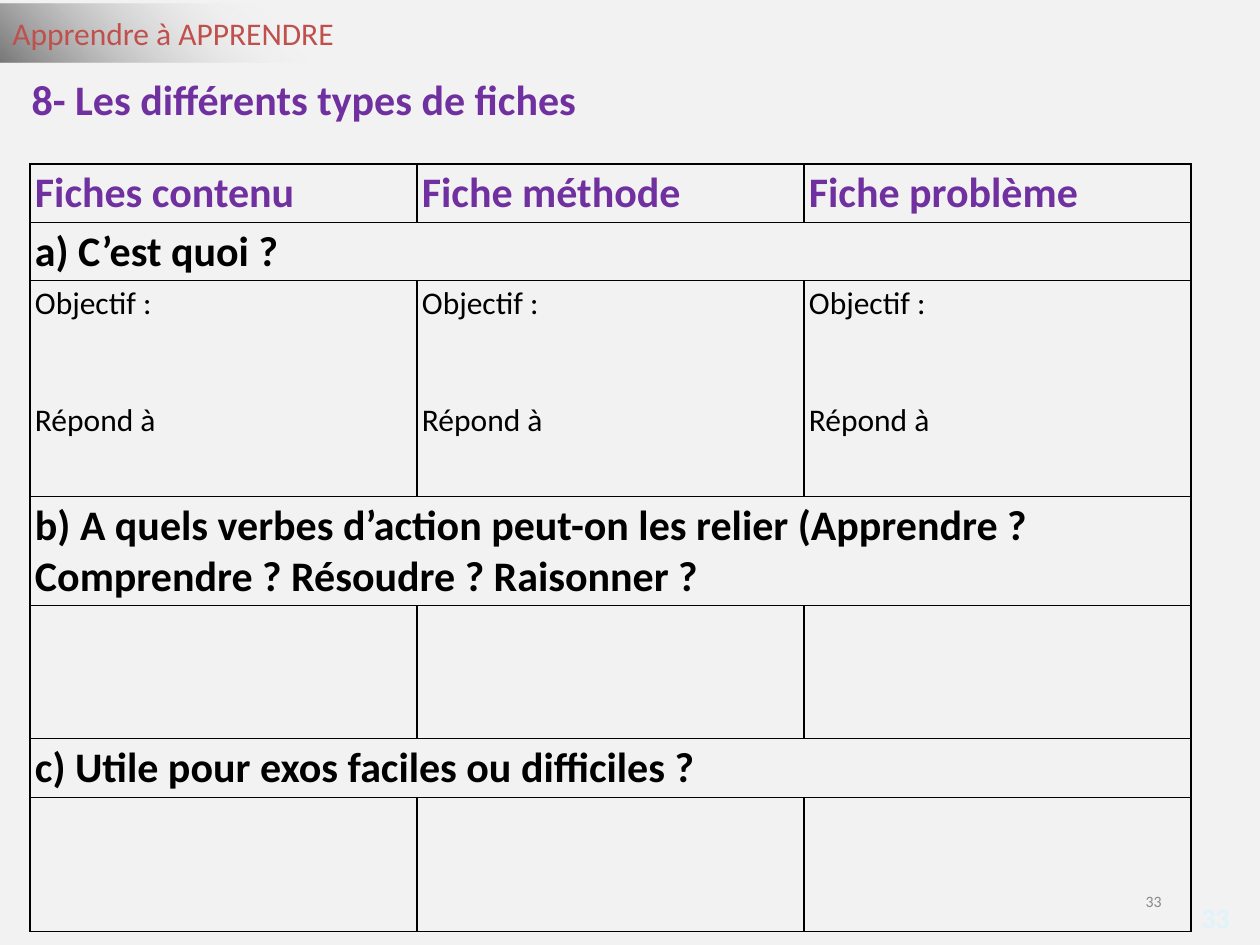
from lxml import etree
from pptx import Presentation
from pptx.dml.color import RGBColor
from pptx.enum.shapes import MSO_SHAPE
from pptx.enum.text import MSO_ANCHOR, MSO_AUTO_SIZE, PP_ALIGN
from pptx.oxml import parse_xml
from pptx.oxml.ns import nsdecls, qn
from pptx.util import Emu, Pt

RECTANGLE = MSO_SHAPE.RECTANGLE
TOP, MIDDLE = MSO_ANCHOR.TOP, MSO_ANCHOR.MIDDLE
LEFT, RIGHT = PP_ALIGN.LEFT, PP_ALIGN.RIGHT
NO_AUTOFIT = MSO_AUTO_SIZE.NONE
TITLE_ONLY = 5
EMU_PER_PX = 914400 // 126
FONT = "Calibri"
PURPLE, BLACK, RED = "7030A0", "000000", "C0504D"
GRAY, PALE_BLUE, BACKGROUND = "888888", "DFF3FB", "F2F2F2"
BORDER_WIDTH = Pt(0.75)
COLUMN_WIDTH = 387
ROW_HEIGHTS = [58, 58, 216, 109, 133, 58, 134]
HEADINGS = ["Fiches contenu", "Fiche méthode", "Fiche problème"]
QUESTIONS = {
    1: "a) C’est quoi ?",
    3: "b) A quels verbes d’action peut-on les relier (Apprendre ? "
       "Comprendre ? Résoudre ? Raisonner ?",
    5: "c) Utile pour exos faciles ou difficiles ?",
}
GOALS = ["Objectif : ", "Répond à "]
GOALS_ROW = 2
BANNER_STOPS = [(0, "010101", 51), (60, "FEFEFE", 0), (100, "FEFEFE", 0)]


def px(length):
    """Turn pixels into EMU."""
    return Emu(length * EMU_PER_PX)


def color(value):
    """Turn a hex string into a colour."""
    return RGBColor.from_string(value)


def place(shape, left, top, width, height):
    """Set the position and size of a shape in pixels."""
    shape.left, shape.top = px(left), px(top)
    shape.width, shape.height = px(width), px(height)


def write(frame, lines, size, hex_color, bold=False, align=LEFT, gap=0):
    """Fill a text frame with one paragraph per line, gap points apart."""
    frame.word_wrap = True
    for index, line in enumerate(lines):
        paragraph = frame.add_paragraph() if index else frame.paragraphs[0]
        paragraph.text = line
        paragraph.alignment = align
        paragraph.space_before = Pt(gap if index else 0)
        font = paragraph.font
        font.name, font.size, font.bold = FONT, Pt(size), bold
        font.color.rgb = color(hex_color)


def add_label(slide, box, text, size, hex_color, bold=False, align=LEFT):
    """Add a vertically centred text box."""
    label = slide.shapes.add_textbox(*map(px, box))
    label.text_frame.vertical_anchor = MIDDLE
    write(label.text_frame, [text], size, hex_color, bold, align)


def add_banner(slide):
    """Add the course banner with its fading gradient."""
    banner = slide.shapes.add_shape(RECTANGLE, px(0), px(4), px(491), px(58))
    banner.shadow.inherit = False
    banner.line.fill.background()
    stops = "".join(
        f'<a:gs pos="{position * 1000}"><a:srgbClr val="{value}">'
        f'<a:alpha val="{alpha * 1000}"/></a:srgbClr></a:gs>'
        for position, value, alpha in BANNER_STOPS
    )
    gradient = parse_xml(
        f'<a:gradFill {nsdecls("a")} rotWithShape="1"><a:gsLst>{stops}</a:gsLst>'
        '<a:path path="circle"><a:fillToRect t="100000" r="100000"/></a:path>'
        '</a:gradFill>'
    )
    banner.element.spPr.find(qn("a:prstGeom")).addnext(gradient)
    banner.text_frame.vertical_anchor = MIDDLE
    write(banner.text_frame, ["Apprendre à APPRENDRE"], 18, RED)


def format_title(slide):
    """Move and format the title placeholder."""
    title = slide.shapes.title
    place(title, 19, 67, 1053, 63)
    title.text_frame.auto_size = NO_AUTOFIT
    title.text_frame.vertical_anchor = TOP
    write(title.text_frame, ["8- Les différents types de fiches"], 24, PURPLE, True)


def format_cell(cell):
    """Give a cell thin black borders, narrow margins and no fill."""
    properties = cell._tc.get_or_add_tcPr()
    for side in ("lnL", "lnR", "lnT", "lnB"):
        line = etree.SubElement(properties, qn(f"a:{side}"), w=str(BORDER_WIDTH))
        fill = etree.SubElement(line, qn("a:solidFill"))
        etree.SubElement(fill, qn("a:srgbClr"), val=BLACK)
    cell.fill.background()
    cell.margin_left = cell.margin_right = px(5)
    cell.margin_top = cell.margin_bottom = px(4)


def add_cards_table(slide):
    """Add the table comparing the three kinds of cards."""
    columns = len(HEADINGS)
    frame = slide.shapes.add_table(
        len(ROW_HEIGHTS), columns, px(30), px(164),
        px(COLUMN_WIDTH * columns), px(sum(ROW_HEIGHTS)),
    )
    table = frame.table
    table.first_row = table.horz_banding = False
    for column in table.columns:
        column.width = px(COLUMN_WIDTH)
    for row, height in zip(table.rows, ROW_HEIGHTS):
        row.height = px(height)
    for cell in table.iter_cells():
        format_cell(cell)
    for column, heading in enumerate(HEADINGS):
        write(table.cell(0, column).text_frame, [heading], 24, PURPLE, True)
        write(table.cell(GOALS_ROW, column).text_frame, GOALS, 18, BLACK, gap=45)
    for row, question in QUESTIONS.items():
        cell = table.cell(row, 0)
        cell.merge(table.cell(row, columns - 1))
        write(cell.text_frame, [question], 24, BLACK, True)


def main():
    """Build the slide and save it."""
    presentation = Presentation()
    presentation.slide_width, presentation.slide_height = px(1260), px(945)
    slide = presentation.slides.add_slide(presentation.slide_layouts[TITLE_ONLY])
    slide.background.fill.solid()
    slide.background.fill.fore_color.rgb = color(BACKGROUND)
    add_banner(slide)
    add_label(slide, (1150, 892, 92, 50), "33", 16, PALE_BLUE, True, RIGHT)
    add_label(slide, (890, 876, 284, 50), "33", 9, GRAY, align=RIGHT)
    add_cards_table(slide)
    format_title(slide)
    presentation.save("out.pptx")


if __name__ == "__main__":
    main()
